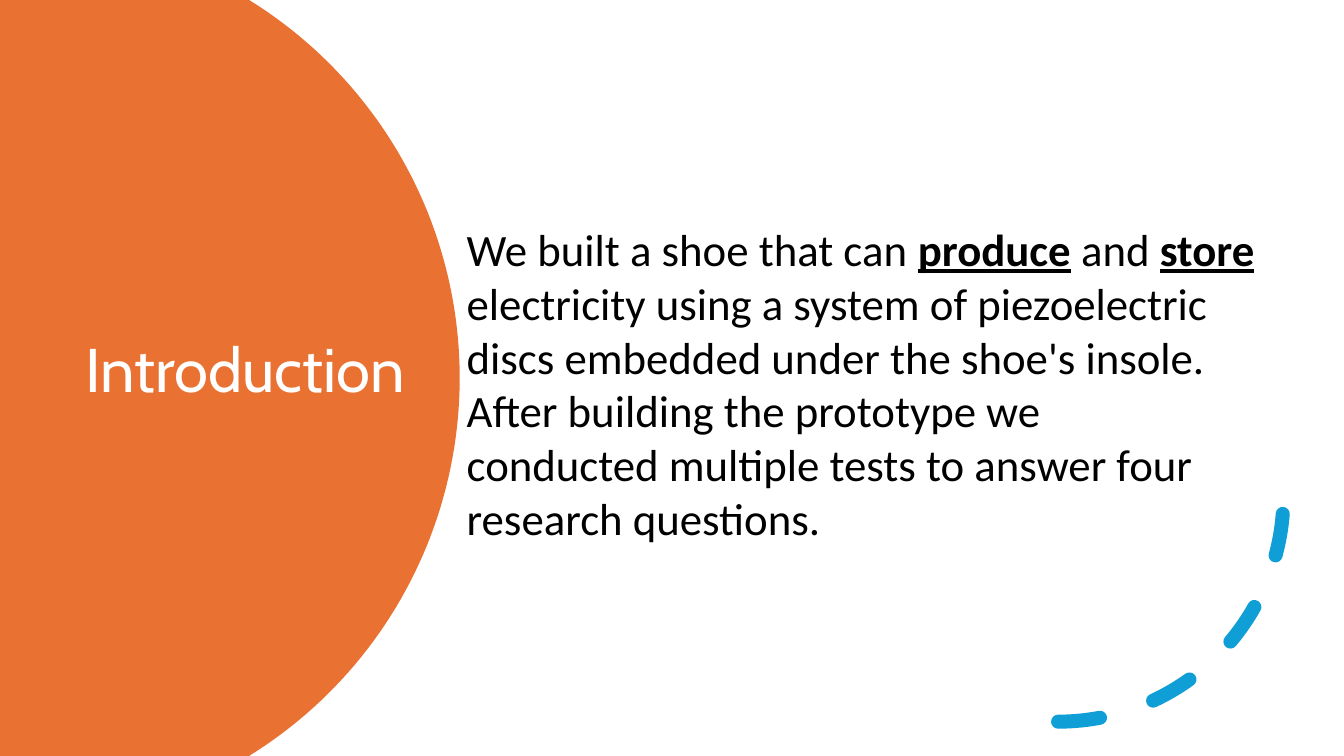
import math

from pptx import Presentation, util as u
from pptx.dml.color import RGBColor
from pptx.enum import dml, shapes, text
from pptx.oxml.ns import qn

WIDTH, HEIGHT = 13.33, 7.5
ORANGE, BLUE, WHITE, BLACK = "E97132", "0F9ED5", "FFFFFF", "000000"
HARD_SPACE = chr(160)


def color(value):
    """Turn a hex string into a colour."""
    return RGBColor.from_string(value)


def add_disc(page, center_x, radius, fill, steps=90):
    """Draw a disc centred on the slide's height and cut by its edges."""
    middle = HEIGHT / 2
    limit = math.asin(middle / radius)
    angles = [limit * (2 * step / steps - 1) for step in range(steps + 1)]
    rim = [(center_x + radius * math.cos(angle), middle + radius * math.sin(angle))
           for angle in angles]
    outline = [(u.Inches(x), u.Inches(y)) for x, y in rim + [(0, HEIGHT)]]
    builder = page.shapes.build_freeform(0, 0)
    builder.add_line_segments(outline, close=True)
    disc = builder.convert_to_shape()
    disc.shadow.inherit = False
    disc.fill.solid()
    disc.fill.fore_color.rgb = color(fill)
    disc.line.fill.background()


def add_dashed_arc(page, left, top, size, line, weight):
    """Draw the lower right quarter of a circle with round dashes."""
    arc = page.shapes.add_shape(shapes.MSO_SHAPE.ARC, *map(u.Inches, (left, top, size, size)))
    arc.shadow.inherit = False
    arc.fill.background()
    arc.line.color.rgb = color(line)
    arc.line.width = u.Pt(weight)
    arc.line.dash_style = dml.MSO_LINE.DASH
    properties = arc.element.spPr
    properties.find(qn("a:xfrm")).set("flipV", "1")
    properties.find(qn("a:ln")).set("cap", "rnd")


def add_text(page, place, spans, font, size, fill, anchor=text.MSO_ANCHOR.TOP,
             spacing=1.0, inset_top=0.05):
    """Add a wrapped paragraph of (words, is_emphasised) spans."""
    box = page.shapes.add_textbox(*map(u.Inches, place))
    frame = box.text_frame
    frame.word_wrap = True
    frame.vertical_anchor = anchor
    frame.margin_top = u.Inches(inset_top)
    para = frame.paragraphs[0]
    para.line_spacing = spacing
    for words, emphasised in spans:
        span = para.add_run()
        span.text = words
        span.font.name = font
        span.font.size = u.Pt(size)
        span.font.color.rgb = color(fill)
        span.font.bold = span.font.underline = emphasised


def main():
    """Build the introduction slide."""
    deck = Presentation()
    deck.slide_width, deck.slide_height = u.Inches(WIDTH), u.Inches(HEIGHT)
    page = deck.slides.add_slide(deck.slide_layouts[6])
    add_disc(page, 0.15, 4.41, ORANGE)
    add_text(page, (0.75, 1.26, 3.5, 4.88), [("Introduction", False)], "Cabin", 44, WHITE,
             anchor=text.MSO_ANCHOR.MIDDLE, spacing=0.9)
    add_dashed_arc(page, 8.26, 2.69, 4.47, BLUE, 10)
    summary = [
        ("We built a shoe that can ", False),
        ("produce", True),
        (" and ", False),
        ("store", True),
        (" electricity using a system of piezoelectric discs embedded under "
         f"the{HARD_SPACE}shoe's insole. After building the prototype we "
         f"conducted{HARD_SPACE}multiple tests{HARD_SPACE}to answer four "
         "research questions.", False),
    ]
    add_text(page, (4.53, 0.55, 8.19, 5.76), summary, "Calibri", 32, BLACK, inset_top=1.65)
    deck.save("out.pptx")


if __name__ == "__main__":
    main()
